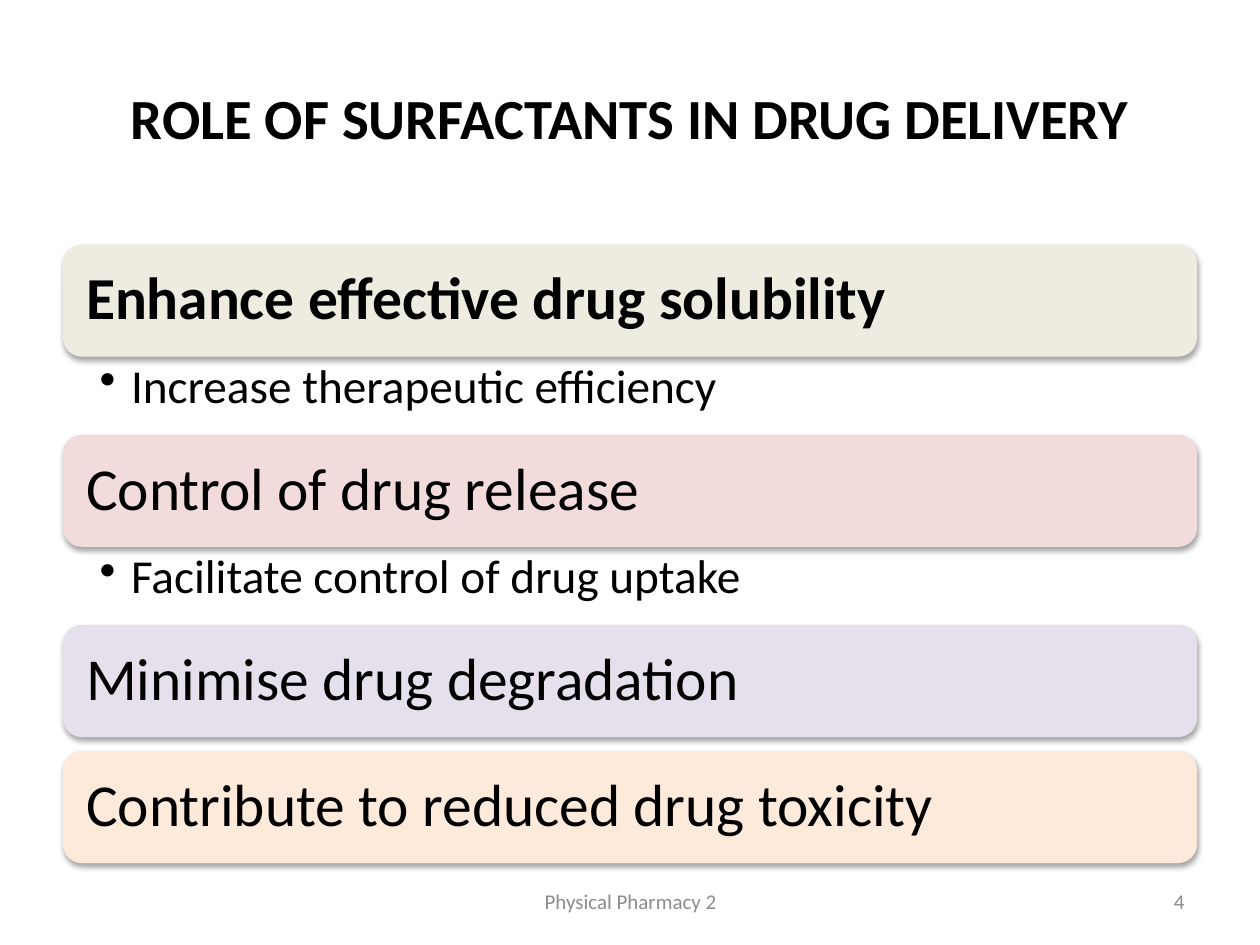
from dataclasses import dataclass

import pptx
import pptx.dml.color
import pptx.enum.shapes
import pptx.enum.text
import pptx.oxml.ns
import pptx.util
from lxml import etree

Inches, Pt = pptx.util.Inches, pptx.util.Pt
Align = pptx.enum.text.PP_ALIGN
Anchor = pptx.enum.text.MSO_ANCHOR
qn = pptx.oxml.ns.qn

# Grid: 20 columns by 75 rows over the 10 x 7.5 inch slide
COLUMN, ROW = 0.5, 0.1
LEFT, WIDTH = 1, 18
BAR_ROWS, DETAIL_ROWS, GAP_ROWS = 8.9, 6.2, 1.1
FIRST_BAR_ROW = 19.4

FONT, BLACK, GREY = "Calibri", "000000", "8C8C8C"


@dataclass
class Role:
    heading: str
    fill: str
    detail: str = ""
    bold: bool = False


ROLES = [
    Role("Enhance effective drug solubility", "EEECE1", "Increase therapeutic efficiency", True),
    Role("Control of drug release", "F2DCDB", "Facilitate control of drug uptake"),
    Role("Minimise drug degradation", "E6E0EC"),
    Role("Contribute to reduced drug toxicity", "FDEADA"),
]


def color(value: str) -> pptx.dml.color.RGBColor:
    return pptx.dml.color.RGBColor.from_string(value)


def area(column: float, row: float, columns: float, rows: float) -> list:
    return [Inches(column * COLUMN), Inches(row * ROW),
            Inches(columns * COLUMN), Inches(rows * ROW)]


def write(box, text: str, size: float, ink: str = BLACK, bold: bool = False,
          align=Align.LEFT, anchor=Anchor.MIDDLE, margins=(0.1, 0.05, 0.1, 0.05)):
    """Fill a shape with one formatted paragraph and return it."""
    frame = box.text_frame
    frame.word_wrap = True
    frame.auto_size = pptx.enum.text.MSO_AUTO_SIZE.NONE
    frame.vertical_anchor = anchor
    (frame.margin_left, frame.margin_top,
     frame.margin_right, frame.margin_bottom) = map(Inches, margins)
    para = frame.paragraphs[0]
    para.text = text
    para.alignment = align
    para.font.name, para.font.size, para.font.bold = FONT, Pt(size), bold
    para.font.color.rgb = color(ink)
    return para


def add_shadow(shape) -> None:
    shape.shadow.inherit = False
    effects = shape._element.spPr.find(qn("a:effectLst"))
    shadow = etree.SubElement(effects, qn("a:outerShdw"), blurRad=str(Pt(3.1)),
                              dist=str(Pt(1.8)), dir="5400000", rotWithShape="0")
    ink = etree.SubElement(shadow, qn("a:srgbClr"), val=BLACK)
    etree.SubElement(ink, qn("a:alpha"), val="35000")


def add_bar(page, role: Role, row: float) -> None:
    bar = page.shapes.add_shape(pptx.enum.shapes.MSO_SHAPE.ROUNDED_RECTANGLE,
                                *area(LEFT, row, WIDTH, BAR_ROWS))
    bar.fill.solid()
    bar.fill.fore_color.rgb = color(role.fill)
    bar.line.fill.background()
    add_shadow(bar)
    para = write(bar, role.heading, 34, bold=role.bold, margins=(0.14,) * 4)
    para.line_spacing = 0.9


def add_detail(page, text: str, row: float) -> None:
    box = page.shapes.add_textbox(*area(LEFT, row, WIDTH, DETAIL_ROWS))
    box.text_frame.paragraphs[0]._p.get_or_add_pPr().append(
        etree.Element(qn("a:buChar"), char="•"))
    para = write(box, text, 27, anchor=Anchor.TOP, margins=(0.29, 0.05, 0.26, 0.05))
    para.line_spacing = 0.9
    properties = para._p.get_or_add_pPr()
    properties.set("marL", str(Inches(0.25)))
    properties.set("indent", str(-Inches(0.25)))


def add_footer(page, text: str, column: float, columns: float, align) -> None:
    box = page.shapes.add_textbox(*area(column, 69.5, columns, 4))
    write(box, text, 12, GREY, align=align)


def main() -> None:
    deck = pptx.Presentation()
    deck.slide_width, deck.slide_height = Inches(10), Inches(7.5)
    page = deck.slides.add_slide(deck.slide_layouts[5])

    # Title
    title = page.shapes.title
    title.left, title.top, title.width, title.height = area(LEFT, 3, WIDTH, 12.5)
    write(title, "ROLE OF SURFACTANTS IN DRUG DELIVERY", 32.4, bold=True, align=Align.CENTER)

    # Stacked roles, each followed by its detail or by a gap
    row = FIRST_BAR_ROW
    for role in ROLES:
        add_bar(page, role, row)
        row += BAR_ROWS
        if role.detail:
            add_detail(page, role.detail, row)
        row += DETAIL_ROWS if role.detail else GAP_ROWS

    # Footer and page number
    add_footer(page, "Physical Pharmacy 2", 6.84, 6.34, Align.CENTER)
    add_footer(page, "4", 14.34, 4.66, Align.RIGHT)

    deck.save("out.pptx")


if __name__ == "__main__":
    main()
